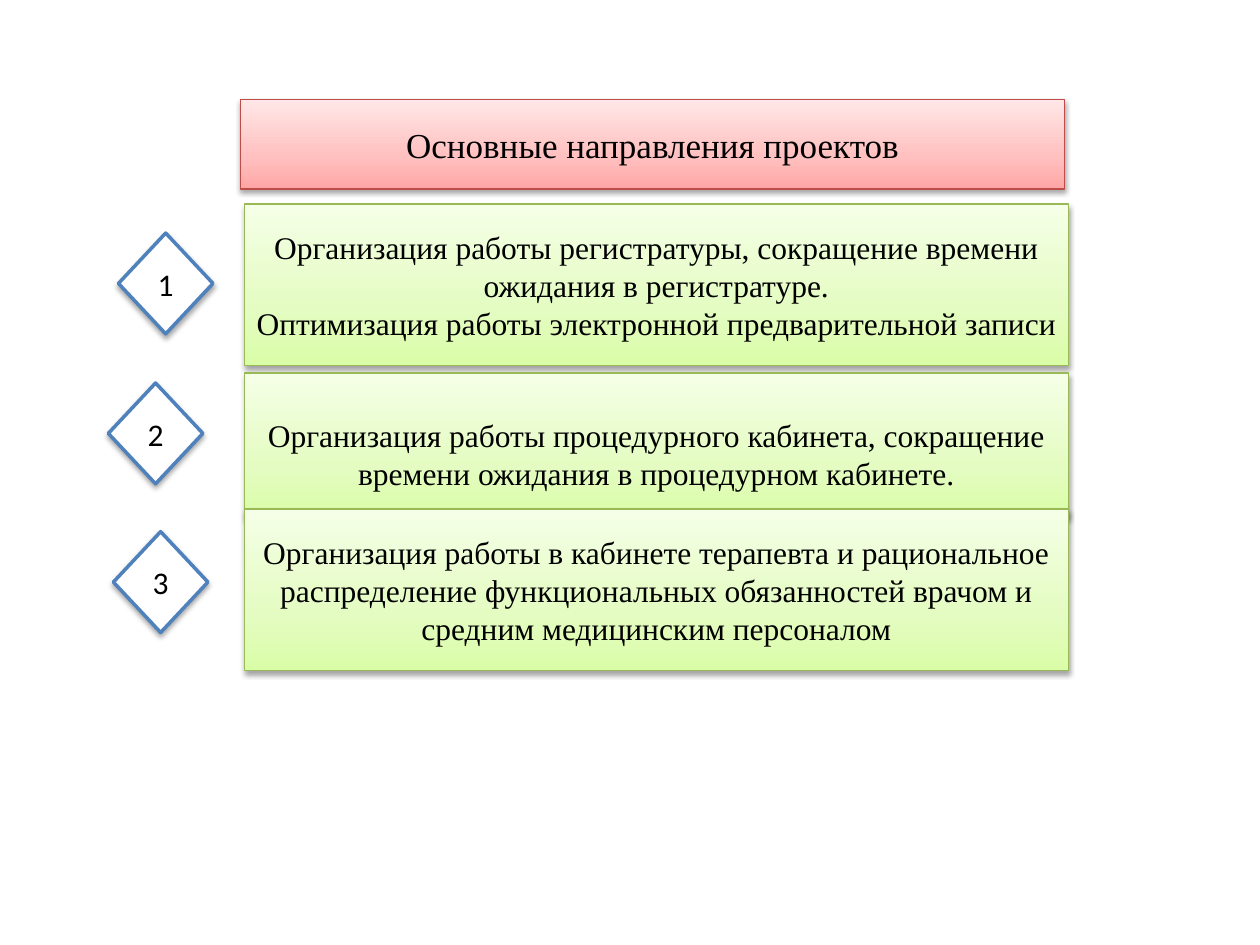
import lxml.etree
import pptx
import pptx.dml.color
import pptx.enum.shapes
import pptx.enum.text
import pptx.oxml
import pptx.oxml.ns
import pptx.util

Inches = pptx.util.Inches
Pt = pptx.util.Pt
SHAPES = pptx.enum.shapes.MSO_SHAPE


def rgb(hex_color):
    return pptx.dml.color.RGBColor.from_string(hex_color)


def add_block(kind, position, line_color, line_width, paragraphs, font_name, font_size, gradient=None):
    """Add a shadowed shape with centred text; gradient runs from bottom to top, white fill without it."""
    block = slide.shapes.add_shape(kind, *[Inches(length) for length in position])
    block.line.color.rgb = rgb(line_color)
    block.line.width = Pt(line_width)
    if gradient:
        block.fill.gradient()
        block.fill.gradient_angle = 90
        stops = block._element.spPr.find(".//" + pptx.oxml.ns.qn("a:gsLst"))
        for stop in list(stops):
            stops.remove(stop)
        for percent, color in zip((0, 35, 100), gradient):
            stops.append(pptx.oxml.parse_xml(
                f'<a:gs {pptx.oxml.ns.nsdecls("a")} pos="{percent * 1000}">'
                f'<a:srgbClr val="{color}"/></a:gs>'))
    else:
        block.fill.solid()
        block.fill.fore_color.rgb = rgb("FFFFFF")

    block.shadow.inherit = False
    effects = block._element.spPr.find(pptx.oxml.ns.qn("a:effectLst"))
    effects.append(pptx.oxml.parse_xml(
        f'<a:outerShdw {pptx.oxml.ns.nsdecls("a")} blurRad="{Pt(3)}" dist="{Pt(1.8)}" '
        'dir="5400000" rotWithShape="0"><a:srgbClr val="000000">'
        '<a:alpha val="35000"/></a:srgbClr></a:outerShdw>'))

    frame = block.text_frame
    frame.word_wrap = True
    frame.vertical_anchor = pptx.enum.text.MSO_ANCHOR.MIDDLE
    frame.margin_left = frame.margin_right = frame.margin_top = frame.margin_bottom = Inches(0.05)
    frame.text = "\n".join(paragraphs)
    for paragraph in frame.paragraphs:
        paragraph.alignment = pptx.enum.text.PP_ALIGN.CENTER
        paragraph.font.name = font_name
        paragraph.font.size = Pt(font_size)
        paragraph.font.color.rgb = rgb("000000")
    return block


presentation = pptx.Presentation()
presentation.slide_width = Inches(10)
presentation.slide_height = Inches(7.5)
slide = presentation.slides.add_slide(presentation.slide_layouts[6])

add_block(SHAPES.RECTANGLE, (1.91, 0.79, 6.54, 0.71), "BF4C48", 0.75,
          ["Основные направления проектов"], "Times New Roman", 20,
          ("FFA6A5", "FFC0BF", "FFE7E7"))

# top, height, top inset, paragraphs
directions = [
    (1.62, 1.28, 0.05, [
        "Организация работы регистратуры, сокращение времени ожидания в регистратуре.",
        "Оптимизация работы электронной предварительной записи"]),
    (2.96, 1.14, 0.2, [
        "Организация работы процедурного кабинета, сокращение времени ожидания "
        "в процедурном кабинете."]),
    (4.04, 1.28, 0.05, [
        "Организация работы в кабинете терапевта и рациональное распределение "
        "функциональных обязанностей врачом и средним медицинским персоналом"]),
]
for top, height, top_inset, paragraphs in directions:
    direction = add_block(SHAPES.RECTANGLE, (1.94, top, 6.54, height), "98B955", 0.75,
                          paragraphs, "Times New Roman", 18, ("DAFDA7", "E4FCC2", "F5FFE7"))
    direction.text_frame.margin_top = Inches(top_inset)

for number, (left, top) in enumerate([(0.94, 1.85), (0.86, 3.04), (0.9, 4.22)], start=1):
    add_block(SHAPES.FLOWCHART_DECISION, (left, top, 0.75, 0.8), "4F81BD", 2,
              [str(number)], "Calibri", 18)

presentation.save("out.pptx")
